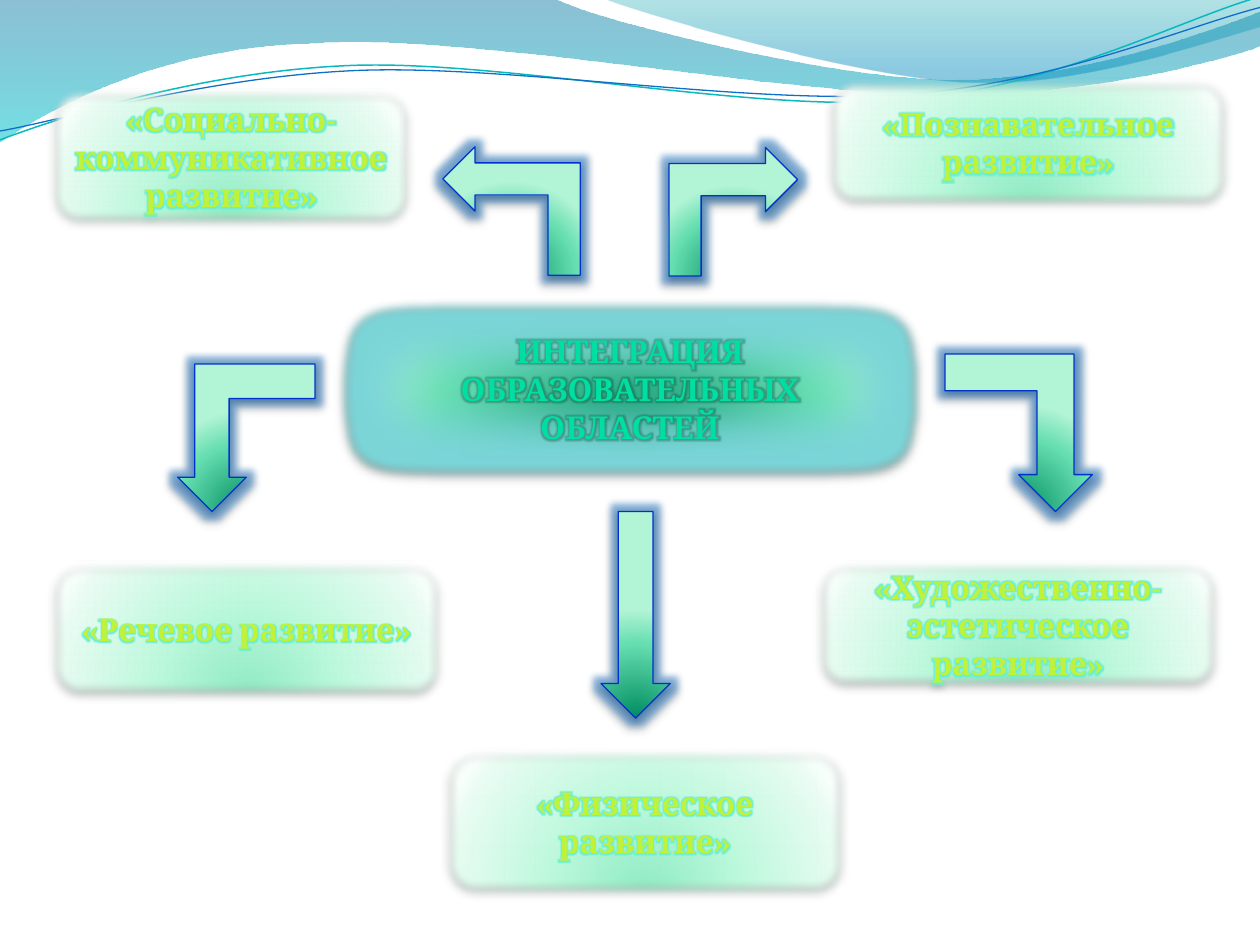
import math
from dataclasses import dataclass

from lxml import etree
from pptx import Presentation
from pptx import util as u
from pptx.dml.color import RGBColor
from pptx.enum import shapes, text
from pptx.oxml import ns


@dataclass(frozen=True)
class Theme:
    """Colours, gradients and type used across the slide."""
    font: str = "Cambria"
    size: int = 18
    line_width: float = 0.75
    border: str = "0A9B74"
    arrow_border: str = "0033CC"
    arrow_glow: tuple = (8, "0F6FC6", 45)
    centre_glow: tuple = (11, "7BD5D8")
    centre_text: str = "00DFA2"
    centre_text_glow: tuple = (7, "004030", 35)
    area_text: str = "BFF238"
    area_text_glow: tuple = (5, "6EF0D2")
    wave_teal: str = "0AB8BF"
    wave_blue: str = "0F6FC6"
    deep: tuple = ((0, "008C60"), (68, "65DEB0"), (100, "B2F4D6"))
    pale: tuple = ((0, "8DEAC2"), (43, "BAF8DB"), (93, "EAFCF3"), (100, "F7FFFB"))
    left_wave: tuple = ((0, "0074A1", 45), (100, "00C6CF", 55))
    right_wave: tuple = ((0, "00A1A9", 30), (80, "008BBF", 45))


THEME = Theme()
TILT = 357.3

WAVE_FILLS = (
    (THEME.left_wave, (
        ((0, 0),),
        ((4.4, -0.01),),
        ((4.76, 0.17), (6.64, 0.63), (7.58, 0.63)),
        ((8.53, 0.63), (9.58, 0.26), (10, 0.09)),
        ((10.01, 0.36),),
        ((9.83, 0.44), (8.7, 0.76), (7.46, 0.75)),
        ((6.22, 0.75), (3.82, 0.28), (2.57, 0.34)),
        ((1.29, 0.36), (0.46, 0.83), (-0.01, 1.13)))),
    (THEME.right_wave, (
        ((4.79, -0.01),),
        ((5.09, 0.11), (6.82, 0.62), (7.69, 0.65)),
        ((8.56, 0.69), (9.61, 0.32), (10, 0.21)),
        ((10, 0),))),
)
WAVE_LINES = (
    (THEME.wave_teal, 0.85, (4.99, 0.575), (
        ((0, 1.11),),
        ((0.48, 0.93), (1.58, 0.57), (2.77, 0.52)),
        ((3.95, 0.47), (5.93, 0.89), (7.13, 0.8)),
        ((8.33, 0.71), (9.38, 0.15), (9.98, -0.02)))),
    (THEME.wave_blue, 0.75, (5, 0.59), (
        ((0, 1.04),),
        ((0.47, 0.96), (1.64, 0.61), (2.83, 0.56)),
        ((4.03, 0.51), (5.97, 0.84), (7.17, 0.75)),
        ((8.36, 0.67), (9.41, 0.21), (10, 0.06)))),
)
AREAS = (
    ("«Социально-коммуникативное развитие»", (0.39, 0.7, 2.89, 1.09)),
    ("«Познавательное развитие»", (6.56, 0.62, 3.2, 1.02)),
    ("«Речевое развитие»", (0.39, 4.45, 3.13, 1.09)),
    ("«Художественно-эстетическое развитие»", (6.48, 4.45, 3.2, 1.02)),
    ("«Физическое развитие»", (3.52, 5.94, 3.2, 1.17)),
)
BENT = shapes.MSO_SHAPE.BENT_UP_ARROW
ARROWS = (
    (BENT, (7.5, 2.81, 1.17, 1.25), 0, "V"),
    (BENT, (1.41, 2.89, 1.09, 1.17), 0, "HV"),
    (BENT, (3.55, 1.13, 1.02, 1.09), 270, ""),
    (BENT, (5.31, 1.17, 1.02, 1.02), 90, "H"),
    (shapes.MSO_SHAPE.DOWN_ARROW, (4.77, 4.06, 0.55, 1.64), 0, ""),
)


def add_node(parent, tag, **attributes):
    """Append a DrawingML element and return it."""
    node = etree.SubElement(parent, ns.qn(f"a:{tag}"))
    for name, value in attributes.items():
        node.set(name, str(value))
    return node


def add_colour(parent, colour, opacity=100):
    """Append an RGB colour with its opacity in percent."""
    node = add_node(parent, "srgbClr", val=colour)
    if opacity < 100:
        add_node(node, "alpha", val=opacity * 1000)


def add_glow(effects, radius, *colour):
    """Append a glow with its radius in points."""
    add_colour(add_node(effects, "glow", rad=u.Pt(radius)), *colour)


def set_gradient(shape, stops, circular):
    """Fill a shape with a circular or a vertical gradient."""
    shape.fill.gradient()
    gradient = shape._element.spPr.find(ns.qn("a:gradFill"))
    for child in list(gradient):
        gradient.remove(child)
    stop_list = add_node(gradient, "gsLst")
    for position, *colour in stops:
        add_colour(add_node(stop_list, "gs", pos=position * 1000), *colour)
    if circular:
        circle = add_node(gradient, "path", path="circle")
        add_node(circle, "fillToRect", l=50000, t=130000, r=50000, b=-30000)
    else:
        add_node(gradient, "lin", ang=5400000, scaled=0)


def set_effects(shape, shadow_opacity, glow=None, soft_edge=0):
    """Give a shape its shadow and, if asked, a glow and a soft edge."""
    shape.shadow.inherit = False
    effects = shape._element.spPr.find(ns.qn("a:effectLst"))
    if glow:
        add_glow(effects, *glow)
    shadow = add_node(effects, "outerShdw", blurRad=u.Pt(4), dist=u.Pt(2),
                      dir=5400000, rotWithShape=0)
    add_colour(shadow, "000000", shadow_opacity)
    if soft_edge:
        add_node(effects, "softEdge", rad=u.Inches(soft_edge))


def set_line(shape, colour, width=THEME.line_width):
    """Set the outline colour and width."""
    shape.line.color.rgb = RGBColor.from_string(colour)
    shape.line.width = u.Pt(width)


def turn(point, centre, degrees):
    """Rotate a point clockwise about a centre."""
    x, y = point[0] - centre[0], point[1] - centre[1]
    sine, cosine = math.sin(math.radians(degrees)), math.cos(math.radians(degrees))
    return centre[0] + x * cosine - y * sine, centre[1] + x * sine + y * cosine


def add_outline(container, segments, closed):
    """Add a freeform whose three-point segments are cubic curves."""
    first, *rest = [(u.Inches(x), u.Inches(y)) for segment in segments for x, y in segment]
    builder = container.build_freeform(*first)
    builder.add_line_segments(rest, close=closed)
    shape = builder.convert_to_shape()
    shape.shadow.inherit = False
    lines = iter(shape._element.findall(f".//{ns.qn('a:lnTo')}"))
    for segment in segments[1:]:
        head, *tail = [next(lines) for _ in segment]
        if tail:
            head.tag = ns.qn("a:cubicBezTo")
        for line in tail:
            head.append(line[0])
            line.getparent().remove(line)
    return shape


def add_waves(slide):
    """Draw the waves along the top of the slide."""
    for stops, segments in WAVE_FILLS:
        wave = add_outline(slide.shapes, segments, True)
        set_gradient(wave, stops, circular=False)
        wave.line.fill.background()
    group = slide.shapes.add_group_shape()
    for colour, width, centre, segments in WAVE_LINES:
        level = [[turn(point, centre, -TILT) for point in segment] for segment in segments]
        wave = add_outline(group.shapes, level, False)
        wave.rotation = TILT
        wave.fill.background()
        set_line(wave, colour, width)


def add_box(slide, box, label, stops, colour, glow):
    """Add a rounded box with a bold, centred, glowing label."""
    shape = slide.shapes.add_shape(shapes.MSO_SHAPE.ROUNDED_RECTANGLE, *map(u.Inches, box))
    set_gradient(shape, stops, circular=True)
    set_line(shape, THEME.border)
    frame = shape.text_frame
    frame.word_wrap = True
    frame.vertical_anchor = text.MSO_ANCHOR.MIDDLE
    paragraph = frame.paragraphs[0]
    paragraph.text = label
    paragraph.alignment = text.PP_ALIGN.CENTER
    font = paragraph.font
    font.name, font.size, font.bold = THEME.font, u.Pt(THEME.size), True
    font.color.rgb = RGBColor.from_string(colour)
    properties = paragraph.runs[0]._r.get_or_add_rPr()
    add_glow(add_node(properties, "effectLst"), *glow)
    return shape


def add_centre(slide, box):
    """Add the glowing central box."""
    shape = add_box(slide, box, "ИНТЕГРАЦИЯ ОБРАЗОВАТЕЛЬНЫХ ОБЛАСТЕЙ",
                    THEME.deep, THEME.centre_text, THEME.centre_text_glow)
    set_effects(shape, 45, THEME.centre_glow, 0.35)


def add_area(slide, label, box):
    """Add one educational area."""
    shape = add_box(slide, box, label, THEME.pale, THEME.area_text, THEME.area_text_glow)
    set_effects(shape, 35, soft_edge=0.07)


def add_arrow(slide, kind, box, rotation, flips):
    """Add a glowing arrow, turned and mirrored as asked."""
    shape = slide.shapes.add_shape(kind, *map(u.Inches, box))
    shape.rotation = rotation
    for axis in flips:
        shape._element.spPr.xfrm.set(f"flip{axis}", "1")
    set_gradient(shape, THEME.deep, circular=True)
    set_line(shape, THEME.arrow_border)
    set_effects(shape, 45, THEME.arrow_glow)


def main():
    """Build and save the slide."""
    presentation = Presentation()
    presentation.slide_width, presentation.slide_height = u.Inches(10), u.Inches(7.5)
    slide = presentation.slides.add_slide(presentation.slide_layouts[6])
    add_waves(slide)
    add_centre(slide, (2.81, 2.5, 4.38, 1.17))
    for label, box in AREAS:
        add_area(slide, label, box)
    for arrow in ARROWS:
        add_arrow(slide, *arrow)
    presentation.save("out.pptx")


if __name__ == "__main__":
    main()
